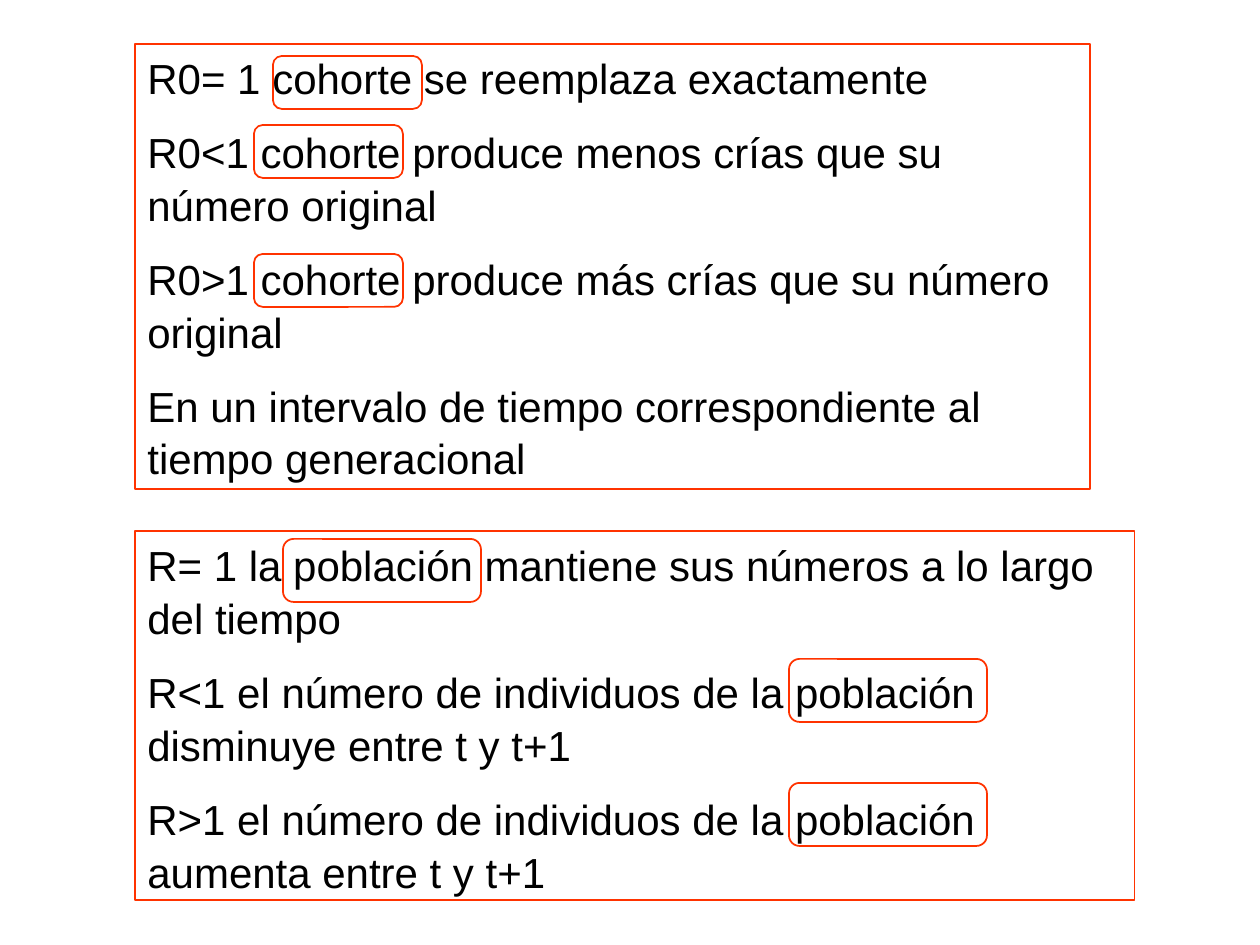
from dataclasses import dataclass

import pptx
import pptx.dml.color
import pptx.enum.shapes
import pptx.enum.text
import pptx.util

PX = 914400 // 126
RED = "FF3300"
SHAPES = pptx.enum.shapes.MSO_SHAPE


@dataclass(frozen=True)
class Box:
    left: int
    top: int
    width: int
    height: int


@dataclass(frozen=True)
class Panel:
    box: Box
    lines: tuple[str, ...]
    marks: tuple[Box, ...]


def rgb(value: str) -> pptx.dml.color.RGBColor:
    return pptx.dml.color.RGBColor.from_string(value)


def add_outline(s, kind, box: Box, line_width: float):
    sp = s.shapes.add_shape(
        kind, box.left * PX, box.top * PX, box.width * PX, box.height * PX
    )
    sp.shadow.inherit = False
    sp.fill.background()
    sp.line.color.rgb = rgb(RED)
    sp.line.width = pptx.util.Pt(line_width)
    return sp


def add_panel(s, panel: Panel) -> None:
    sp = add_outline(s, SHAPES.RECTANGLE, panel.box, 0.75)
    sp.fill.solid()
    sp.fill.fore_color.rgb = rgb("FFFFFF")
    tf = sp.text_frame
    tf.word_wrap = True
    tf.vertical_anchor = pptx.enum.text.MSO_ANCHOR.TOP
    tf.text = "\n".join(panel.lines)
    for i, p in enumerate(tf.paragraphs):
        p.alignment = pptx.enum.text.PP_ALIGN.LEFT
        p.line_spacing = 1.05
        p.space_before = pptx.util.Pt(12 if i else 0)
        for r in p.runs:
            r.font.name = "Arial"
            r.font.size = pptx.util.Pt(24)
            r.font.color.rgb = rgb("000000")
    for mark in panel.marks:
        add_outline(s, SHAPES.ROUNDED_RECTANGLE, mark, 1)


POPULATION = Panel(
    Box(135, 531, 1000, 369),
    (
        "R= 1 la población mantiene sus números a lo largo del tiempo",
        "R<1 el número de individuos de la población disminuye entre t y t+1",
        "R>1 el número de individuos de la población aumenta entre t y t+1",
    ),
    tuple(
        Box(left, top, 198, 63)
        for left, top in ((283, 539), (789, 659), (789, 783))
    ),
)
COHORT = Panel(
    Box(135, 44, 955, 445),
    (
        "R0= 1 cohorte se reemplaza exactamente",
        "R0<1 cohorte produce menos crías que su número original",
        "R0>1 cohorte produce más crías que su número original",
        "En un intervalo de tiempo correspondiente al tiempo generacional",
    ),
    tuple(
        Box(left, top, 149, 53)
        for left, top in ((254, 254), (273, 56), (254, 125))
    ),
)


def main() -> None:
    prs = pptx.Presentation()
    prs.slide_width = pptx.util.Inches(10)
    prs.slide_height = pptx.util.Inches(7.5)
    s = prs.slides.add_slide(prs.slide_layouts[6])
    for panel in (POPULATION, COHORT):
        add_panel(s, panel)
    prs.save("out.pptx")


if __name__ == "__main__":
    main()
